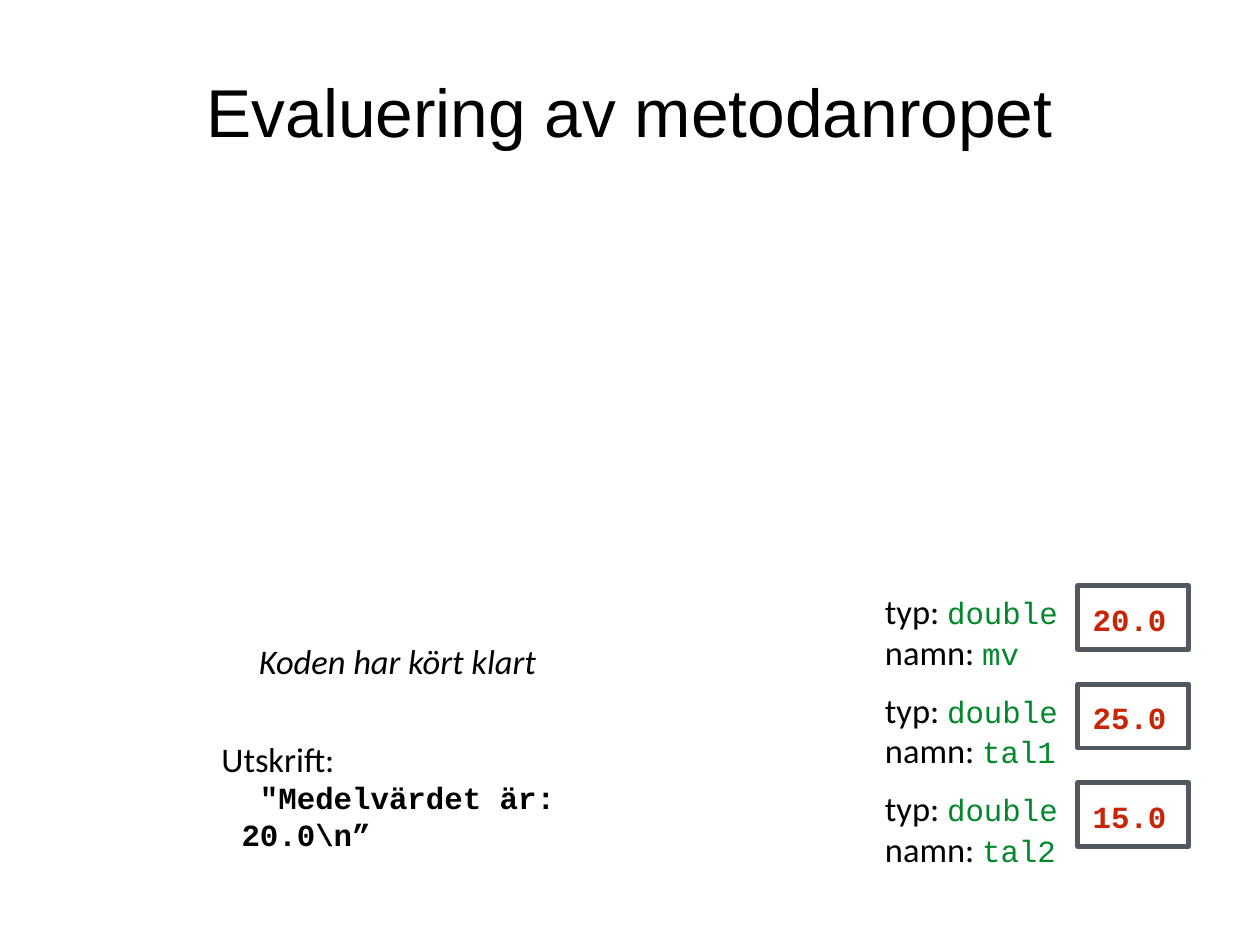
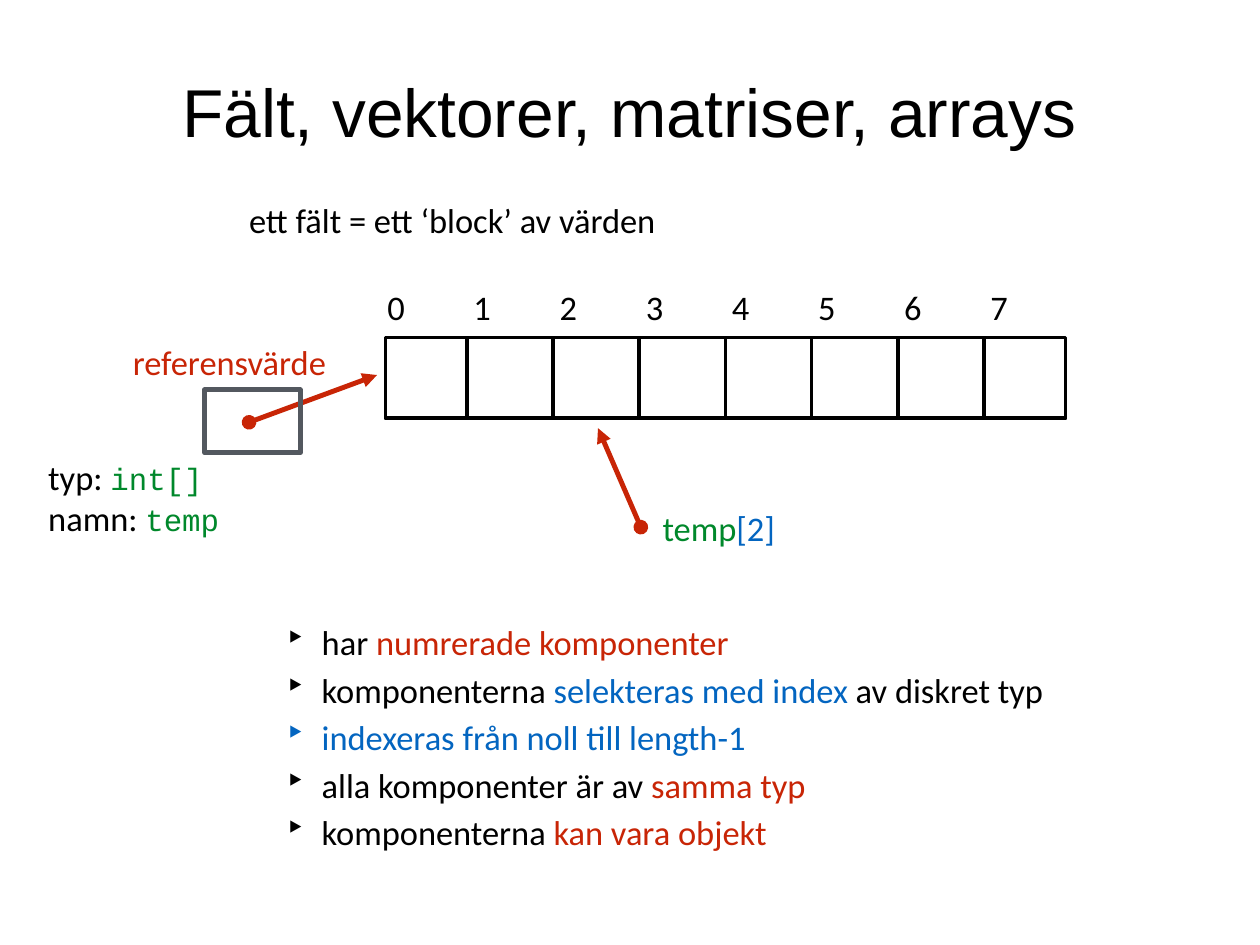
from dataclasses import dataclass
from typing import Optional

from lxml.etree import SubElement
from pptx import Presentation
from pptx.dml.color import RGBColor
from pptx.enum.shapes import MSO_CONNECTOR, MSO_SHAPE
from pptx.enum.text import MSO_ANCHOR, MSO_AUTO_SIZE, PP_ALIGN
from pptx.oxml.ns import qn
from pptx.util import Inches, Pt

COLUMNS, ROWS = 128, 96
CELL = Inches(1) / 9
BLACK, GREY, RED, GREEN, BLUE = "000000", "53585F", "C82506", "00882B", "0365C0"
TITLE_FONT, BODY_FONT, CODE_FONT = "Arial", "Calibri", "Courier New"
TITLE_SIZE, BODY_SIZE, CODE_SIZE = 55, 28, 25
LABEL_PITCH = 4.15
LINE_HEIGHT = 5


@dataclass
class Span:
    text: str
    color: str = BLACK
    font: str = BODY_FONT
    size: float = BODY_SIZE
    bold: bool = False
    italic: bool = False


@dataclass
class Area:
    left: float
    top: float
    width: float
    height: float = LINE_HEIGHT

    def lengths(self) -> list[int]:
        return [grid(value) for value in (self.left, self.top, self.width, self.height)]


@dataclass
class Variable:
    kind: str
    name: str
    value: str


@dataclass
class Arrow:
    start: tuple[float, float]
    end: tuple[float, float]


VARIABLES = [
    Variable("double", "mv", "20.0"),
    Variable("double", "tal1", "25.0"),
    Variable("double", "tal2", "15.0"),
]
REFERENCE_ARROW = Arrow((25.3, 42.9), (38.3, 38.1))
ELEMENT_ARROW = Arrow((65.1, 53.55), (60.75, 43.5))
FACTS = [
    [Span("har "), Span("numrerade komponenter", RED)],
    [Span("komponenterna "), Span("selekteras med index", BLUE), Span(" av diskret typ")],
    [Span("indexeras från noll till length-1", BLUE)],
    [Span("alla komponenter är av "), Span("samma typ", RED)],
    [Span("komponenterna "), Span("kan vara objekt", RED)],
]


def grid(count: float) -> int:
    return round(count * CELL)


def paint(color: str) -> RGBColor:
    return RGBColor.from_string(color)


def code(text: str, color: str = GREEN, bold: bool = False) -> Span:
    return Span(text, color, CODE_FONT, CODE_SIZE, bold)


def fill_para(para, spans: list[Span]) -> None:
    for span in spans:
        run = para.add_run()
        run.text = span.text
        run.font.name = span.font
        run.font.size = Pt(span.size)
        run.font.bold = span.bold
        run.font.italic = span.italic
        run.font.color.rgb = paint(span.color)


def add_bullet(para) -> None:
    para.space_before = Pt(5)
    properties = para._p.get_or_add_pPr()
    properties.set("marL", str(Inches(0.41)))
    properties.set("indent", str(-Inches(0.41)))
    SubElement(properties, qn("a:buSzPct")).set("val", "97000")
    SubElement(properties, qn("a:buChar")).set("char", "‣")


def format_frame(frame, inset: float = 0, anchor: MSO_ANCHOR = MSO_ANCHOR.TOP) -> None:
    frame.word_wrap = True
    frame.auto_size = MSO_AUTO_SIZE.NONE
    frame.vertical_anchor = anchor
    frame.margin_left = frame.margin_right = Inches(inset)
    frame.margin_top = frame.margin_bottom = Inches(inset)


def add_text(page, area: Area, *paragraphs: list[Span], bullets: bool = False,
             inset: float = 0, anchor: MSO_ANCHOR = MSO_ANCHOR.TOP) -> None:
    frame = page.shapes.add_textbox(*area.lengths()).text_frame
    format_frame(frame, inset, anchor)
    for index, spans in enumerate(paragraphs):
        para = frame.add_paragraph() if index else frame.paragraphs[0]
        if bullets:
            add_bullet(para)
        fill_para(para, spans)


def add_box(page, area: Area, color: str = GREY, weight: float = 4):
    box = page.shapes.add_shape(MSO_SHAPE.RECTANGLE, *area.lengths())
    box.shadow.inherit = False
    box.fill.background()
    box.line.color.rgb = paint(color)
    box.line.width = Pt(weight)
    return box


def add_line(page, start: tuple[float, float], end: tuple[float, float],
             color: str = BLACK, weight: float = 3):
    points = [grid(value) for value in (*start, *end)]
    line = page.shapes.add_connector(MSO_CONNECTOR.STRAIGHT, *points)
    line.line.color.rgb = paint(color)
    line.line.width = Pt(weight)
    SubElement(line._element.spPr, qn("a:effectLst"))
    return line


def add_arrow(page, arrow: Arrow) -> None:
    line = add_line(page, arrow.start, arrow.end, RED, 4)
    outline = line.line._get_or_add_ln()
    SubElement(outline, qn("a:headEnd")).set("type", "oval")
    SubElement(outline, qn("a:tailEnd")).set("type", "triangle")


def add_labels(page, left: float, top: float, kind: str, name: str) -> None:
    for row, (label, text) in enumerate((("typ: ", kind), ("namn: ", name))):
        area = Area(left, top + row * LABEL_PITCH, 34.5)
        add_text(page, area, [Span(label), code(text)])


def add_variable(page, top: float, variable: Variable, value_offset: float = 1.5) -> None:
    add_box(page, Area(109.5, top, 11.25, 6.5))
    add_labels(page, 89.9, top + 0.45, variable.kind, variable.name)
    value = code(variable.value, RED, bold=True)
    add_text(page, Area(111, top + value_offset, 11.8, 4), [value])


def add_array(page, area: Area, count: int = 8, pitch: float = 8.75) -> None:
    block = add_box(page, area, BLACK, 3)
    bottom = area.top + area.height
    for index in range(count):
        number = Area(area.left + 0.2 + index * pitch, area.top - 5.2, 5.8)
        add_text(page, number, [Span(str(index))])
        if index:
            across = area.left + area.width / 2 + (index - count / 2) * pitch
            divider = add_line(page, (across, bottom), (across, area.top))
            if index == count / 2:
                divider.begin_connect(block, 2)
                divider.end_connect(block, 0)


def add_page(deck, title: str):
    page = deck.slides.add_slide(deck.slide_layouts[5])
    holder = page.shapes.title
    holder.left, holder.top, holder.width, holder.height = Area(0.6, 0.6, 126.7, 21.2).lengths()
    format_frame(holder.text_frame, anchor=MSO_ANCHOR.MIDDLE)
    para = holder.text_frame.paragraphs[0]
    para.alignment = PP_ALIGN.CENTER
    fill_para(para, [Span(title, font=TITLE_FONT, size=TITLE_SIZE)])
    return page


def build_evaluation(deck) -> None:
    page = add_page(deck, "Evaluering av metodanropet")
    for row, variable in enumerate(VARIABLES):
        add_variable(page, 59.5 + 10 * row, variable)
    add_text(page, Area(22.5, 75, 15.1), [Span("Utskrift:")])
    add_text(page, Area(24, 80.9, 44.1, 4), [code(' "Medelvärdet är: 20.0\\n”', BLACK, bold=True)],
             inset=0.06, anchor=MSO_ANCHOR.MIDDLE)
    add_text(page, Area(26.3, 65, 37), [Span("Koden har kört klart", italic=True)])


def build_arrays(deck) -> None:
    page = add_page(deck, "Fält, vektorer, matriser, arrays")
    add_text(page, Area(25.3, 20.25, 90.5), [Span("ett fält = ett ‘block’ av värden")])
    add_text(page, Area(29, 63.1, 86.3, 23.5), *FACTS, bullets=True)
    add_array(page, Area(39.15, 34.3, 69.1, 8.2))
    add_arrow(page, REFERENCE_ARROW)
    add_text(page, Area(13.5, 34.6, 34.5), [Span("referensvärde", RED)])
    add_box(page, Area(20.8, 39.6, 9.7, 6.4))
    add_labels(page, 4.9, 46.35, "int[]", "temp")
    add_arrow(page, ELEMENT_ARROW)
    add_text(page, Area(67.3, 51.5, 50), [Span("temp", GREEN), Span("[2]", BLUE)])


def main() -> None:
    deck = Presentation()
    deck.slide_width, deck.slide_height = grid(COLUMNS), grid(ROWS)
    build_evaluation(deck)
    build_arrays(deck)
    deck.save("out.pptx")


if __name__ == "__main__":
    main()
